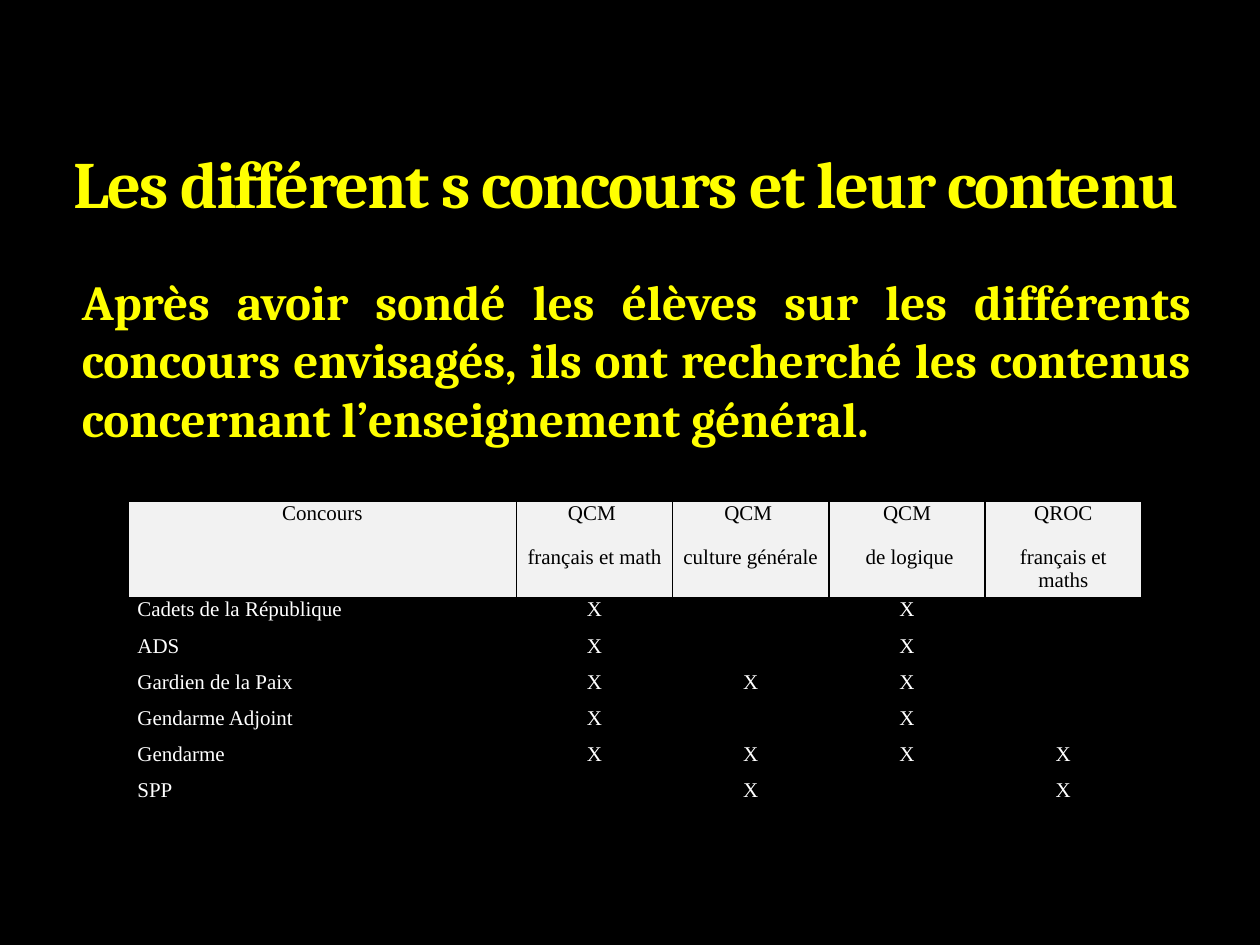
from lxml import etree
from pptx import Presentation
from pptx.dml.color import RGBColor
from pptx.enum.text import MSO_ANCHOR, PP_ALIGN
from pptx.oxml.ns import qn
from pptx.util import Cm, Pt

BLACK = RGBColor(0x00, 0x00, 0x00)
WHITE = RGBColor(0xFF, 0xFF, 0xFF)
YELLOW = RGBColor(0xFF, 0xFF, 0x00)
LIGHT_GREY = RGBColor(0xF2, 0xF2, 0xF2)
CENTER, JUSTIFY = PP_ALIGN.CENTER, PP_ALIGN.JUSTIFY
BOTTOM = MSO_ANCHOR.BOTTOM

HEADERS = [
    "Concours",
    "QCM \nfrançais et math",
    "QCM \nculture générale",
    "QCM\n de logique",
    "QROC\nfrançais et maths",
]
# Each contest with the columns that carry a cross
CONTESTS = [
    ("Cadets de la République", {1, 3}),
    ("ADS", {1, 3}),
    ("Gardien de la Paix ", {1, 2, 3}),
    ("Gendarme Adjoint", {1, 3}),
    ("Gendarme", {1, 2, 3, 4}),
    ("SPP", {2, 4}),
]


class SlideBuilder:
    heading_font = "Cambria"
    table_font = "Times New Roman"

    def __init__(self, slide):
        self.slide = slide

    def background(self, color):
        fill = self.slide.background.fill
        fill.solid()
        fill.fore_color.rgb = color

    def style(self, paragraph, name, size, color, align, bold=False):
        paragraph.alignment = align
        font = paragraph.font
        font.name, font.size, font.bold = name, Pt(size), bold
        font.color.rgb = color

    def text(self, left, top, width, height, text, size, align, spacing=0):
        box = self.slide.shapes.add_textbox(Cm(left), Cm(top), Cm(width), Cm(height))
        frame = box.text_frame
        frame.word_wrap = True
        frame.vertical_anchor = BOTTOM
        paragraph = frame.paragraphs[0]
        run = paragraph.add_run()
        run.text = text
        self.style(paragraph, self.heading_font, size, YELLOW, align, bold=True)
        if spacing:
            run.font._element.set("spc", str(spacing * 100))

    def borders(self, cell, color):
        properties = cell._tc.get_or_add_tcPr()
        for index, side in enumerate(("lnL", "lnR", "lnT", "lnB")):
            line = etree.Element(qn(f"a:{side}"), w=str(Pt(1)))
            fill = etree.SubElement(line, qn("a:solidFill"))
            etree.SubElement(fill, qn("a:srgbClr"), val=str(color))
            properties.insert(index, line)

    def cell(self, cell, text, color, align, fill=None):
        cell.margin_left = cell.margin_right = Cm(0.18)
        cell.margin_top = cell.margin_bottom = 0
        cell.text = text
        for paragraph in cell.text_frame.paragraphs:
            self.style(paragraph, self.table_font, 12, color, align)
            paragraph.space_before = paragraph.space_after = Pt(6)
        if fill is None:
            cell.fill.background()
        else:
            cell.fill.solid()
            cell.fill.fore_color.rgb = fill
        self.borders(cell, BLACK)

    def table(self, left, top, widths, heights, headers, contests):
        frame = self.slide.shapes.add_table(
            len(heights), len(widths), Cm(left), Cm(top),
            Cm(sum(widths)), Cm(sum(heights)))
        table = frame.table
        table.first_row = table.horz_banding = False
        for column, width in zip(table.columns, widths):
            column.width = Cm(width)
        for row, height in zip(table.rows, heights):
            row.height = Cm(height)
        for column, header in enumerate(headers):
            self.cell(table.cell(0, column), header, BLACK, CENTER, LIGHT_GREY)
        for row, (name, crosses) in enumerate(contests, start=1):
            self.cell(table.cell(row, 0), name, WHITE, JUSTIFY)
            for column in range(1, len(headers)):
                mark = "X" if column in crosses else ""
                self.cell(table.cell(row, column), mark, WHITE, CENTER)


def main():
    presentation = Presentation()
    presentation.slide_width, presentation.slide_height = Cm(25.4), Cm(19.05)
    builder = SlideBuilder(presentation.slides.add_slide(presentation.slide_layouts[6]))
    builder.background(BLACK)

    # Title and introduction
    builder.text(1.19, 1.19, 22.86, 3.4, "Les différent s concours et leur contenu",
                 37.8, CENTER, spacing=-1)
    builder.text(1.4, 5.77, 22.86, 3.38,
                 "Après avoir sondé les élèves sur les différents concours envisagés, "
                 "ils ont recherché les contenus concernant l’enseignement général.",
                 28, JUSTIFY)

    # Contests and their tests
    builder.table(2.59, 10.11, [7.82] + [3.15] * 4,
                  [1.4] + [0.73] * len(CONTESTS), HEADERS, CONTESTS)

    presentation.save("out.pptx")


if __name__ == "__main__":
    main()
